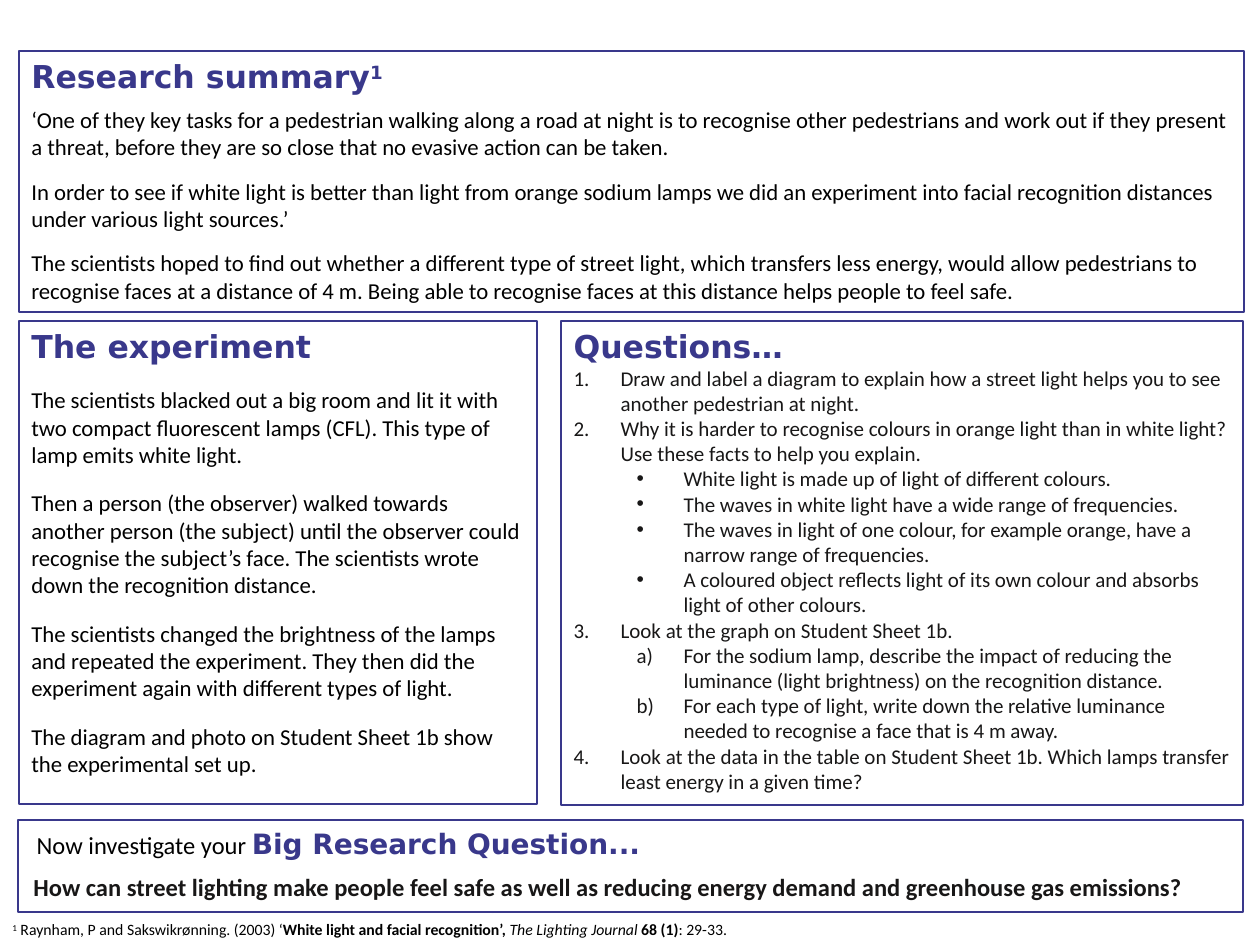
from lxml.etree import SubElement
from pptx import Presentation
from pptx.dml.color import RGBColor
from pptx.enum.shapes import MSO_SHAPE
from pptx.enum.text import MSO_ANCHOR, MSO_AUTO_SIZE, PP_ALIGN
from pptx.oxml.ns import qn
from pptx.util import Inches, Pt

INDIGO = RGBColor(0x39, 0x38, 0x8B)
BLACK = RGBColor(0, 0, 0)
CHARCOAL = RGBColor(0x18, 0x17, 0x17)
HEADING_FONT = "DejaVu Sans"
BODY_FONT = "Calibri"
PX = 914400 / 126

SUMMARY = [
    "‘One of they key tasks for a pedestrian walking along a road at night is to recognise other pedestrians and work out if they present a threat, before they are so close that no evasive action can be taken.",
    "In order to see if white light is better than light from orange sodium lamps we did an experiment into facial recognition distances under various light sources.’",
    "The scientists hoped to find out whether a different type of street light, which transfers less energy, would allow pedestrians to recognise faces at a distance of 4 m. Being able to recognise faces at this distance helps people to feel safe.",
]
EXPERIMENT = [
    "The scientists blacked out a big room and lit it with two compact fluorescent lamps (CFL). This type of lamp emits white light.",
    "Then a person (the observer) walked towards another person (the subject) until the observer could recognise the subject’s face. The scientists wrote down the recognition distance.",
    "The scientists changed the brightness of the lamps and repeated the experiment. They then did the experiment again with different types of light.",
    "The diagram and photo on Student Sheet 1b show the experimental set up.",
]
NUMBER = (0, "buAutoNum", {"type": "arabicPeriod"})
BULLET = (1, "buChar", {"char": "•"})
LETTER = (1, "buAutoNum", {"type": "alphaLcParenR"})
QUESTIONS = [
    (NUMBER, "Draw and label a diagram to explain how a street light helps you to see another pedestrian at night."),
    (NUMBER, "Why it is harder to recognise colours in orange light than in white light? Use these facts to help you explain."),
    (BULLET, "White light is made up of light of different colours."),
    (BULLET, "The waves in white light have a wide range of frequencies."),
    (BULLET, "The waves in light of one colour, for example orange, have a narrow range of frequencies."),
    (BULLET, "A coloured object reflects light of its own colour and absorbs light of other colours."),
    (NUMBER, "Look at the graph on Student Sheet 1b."),
    (LETTER, "For the sodium lamp, describe the impact of reducing the luminance (light brightness) on the recognition distance."),
    (LETTER, "For each type of light, write down the relative luminance needed to recognise a face that is 4 m away."),
    (NUMBER, "Look at the data in the table on Student Sheet 1b. Which lamps transfer least energy in a given time?"),
]
CITATION = [
    ("1", {"raised": True}),
    (" Raynham, P and Sakswikrønning. (2003) ‘", {}),
    ("White light and facial recognition’, ", {"bold": True}),
    ("The Lighting Journal ", {"italic": True}),
    ("68 (1)", {"bold": True}),
    (": 29-33.", {}),
]


def emu(px):
    return round(px * PX)


def add_run(p, text, size, color=BLACK, font=BODY_FONT, bold=False, italic=False, raised=False):
    r = p.add_run()
    r.text = text
    r.font.size = Pt(size)
    r.font.name = font
    r.font.bold = bold
    r.font.italic = italic
    r.font.color.rgb = color
    if raised:
        r._r.get_or_add_rPr().set("baseline", "30000")


def add_heading(p, text, size=18, raised=False):
    add_run(p, text, size, INDIGO, HEADING_FONT, bold=True, raised=raised)


def set_spacing(p, before=0, after=0):
    p.alignment = PP_ALIGN.LEFT
    p.space_before = Pt(before)
    p.space_after = Pt(after)


def set_marker(p, margin, indent, tag, attributes):
    pPr = p._p.get_or_add_pPr()
    pPr.set("marL", str(emu(margin)))
    pPr.set("indent", str(emu(indent)))
    if tag != "buNone":
        SubElement(pPr, qn("a:buFont"), typeface="Arial" if tag == "buChar" else "+mj-lt")
    SubElement(pPr, qn("a:" + tag), **attributes)


def prepare(sp, box):
    sp.left, sp.top, sp.width, sp.height = map(emu, box)
    tf = sp.text_frame
    tf.word_wrap = True
    tf.auto_size = MSO_AUTO_SIZE.NONE
    tf.vertical_anchor = MSO_ANCHOR.TOP
    tf.margin_left = tf.margin_right = Inches(0.1)
    tf.margin_top = tf.margin_bottom = Inches(0.05)
    return tf


def set_border(sp, weight):
    sp.line.color.rgb = INDIGO
    sp.line.width = Pt(weight)


def add_frame(s, box, weight=0.75):
    sp = s.shapes.add_shape(MSO_SHAPE.RECTANGLE, *map(emu, box))
    sp.shadow.inherit = False
    sp.fill.background()
    set_border(sp, weight)
    return sp


def add_text_line(s, box, runs, size, color=BLACK):
    tf = prepare(s.shapes.add_textbox(0, 0, 0, 0), box)
    for text, style in runs:
        add_run(tf.paragraphs[0], text, size, color, **style)


def add_article(s, box, heading, paragraphs, before, after, note=None):
    tf = prepare(add_frame(s, box), box)
    p = tf.paragraphs[0]
    set_spacing(p, after=6)
    add_heading(p, heading)
    if note:
        add_heading(p, note, raised=True)
    for text in paragraphs:
        p = tf.add_paragraph()
        set_spacing(p, before, after)
        add_run(p, text, 13)


def fill_questions(sp, box):
    tf = prepare(sp, box)
    set_border(sp, 0.75)
    p = tf.paragraphs[0]
    set_marker(p, 0, 0, "buNone", {})
    set_spacing(p)
    add_heading(p, "Questions…")
    for (level, tag, attributes), text in QUESTIONS:
        p = tf.add_paragraph()
        p.level = level
        set_marker(p, 47 + 63 * level, -47, tag, attributes)
        set_spacing(p)
        add_run(p, text, 12, CHARCOAL)


def fill_big_question(s, title, box):
    left, top, width, height = box
    p = prepare(title, (left + 6, top, width - 17, 47)).paragraphs[0]
    set_spacing(p)
    add_run(p, "Now investigate your ", 14)
    add_heading(p, "Big Research Question...", 16)
    question = "How can street lighting make people feel safe as well as reducing energy demand and greenhouse gas emissions?"
    add_text_line(s, (left + 3, top + 46, width + 14, 72), [(question, {"bold": True})], 14, CHARCOAL)
    add_frame(s, box, 1)


def main():
    prs = Presentation()
    prs.slide_width, prs.slide_height = Inches(10), Inches(7.5)
    s = prs.slides.add_slide(prs.slide_layouts[1])
    add_article(s, (19, 51, 1225, 261), "Research summary", SUMMARY, 0, 9.8, note="1")
    add_article(s, (19, 321, 518, 483), "The experiment", EXPERIMENT, 6, 6)
    fill_questions(s.placeholders[1], (561, 321, 682, 484))
    fill_big_question(s, s.shapes.title, (18, 820, 1225, 92))
    add_text_line(s, (0, 914, 1242, 31), CITATION, 9)
    prs.save("out.pptx")


if __name__ == "__main__":
    main()
